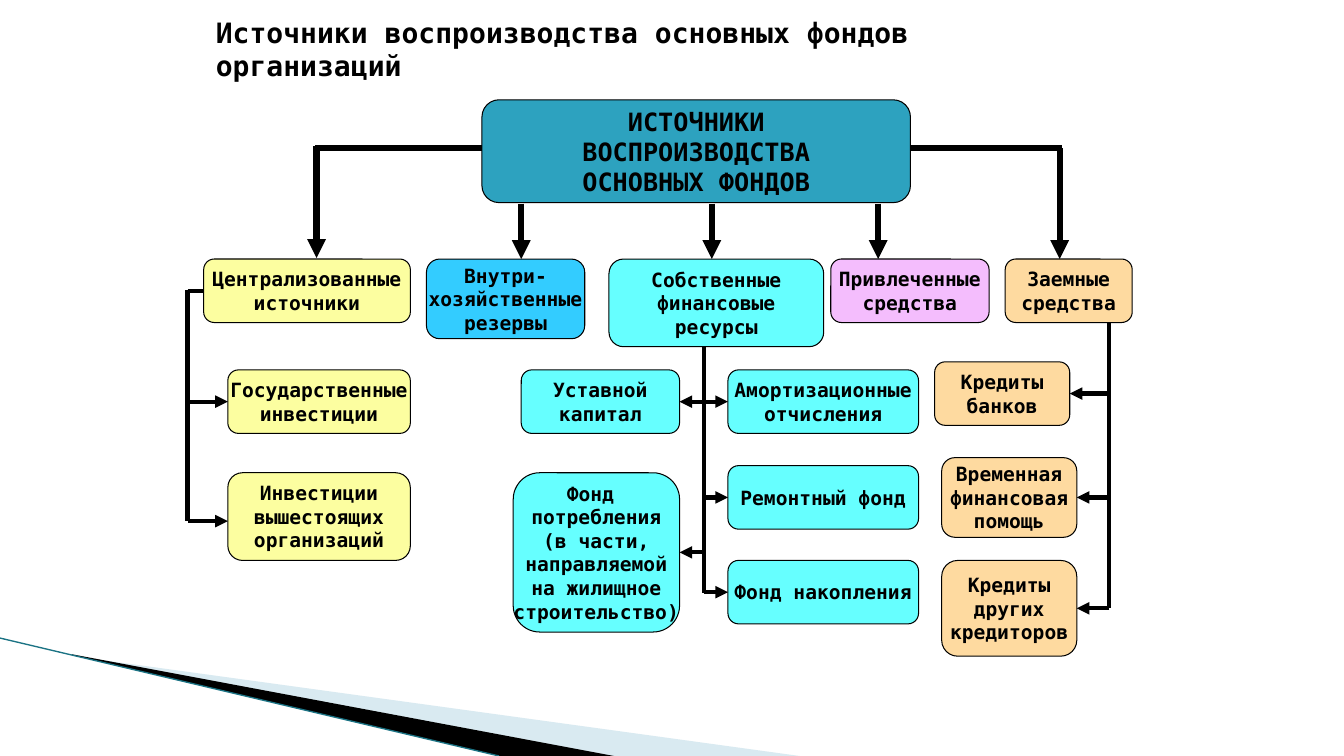
from typing import NamedTuple, Optional

from lxml.etree import SubElement
from pptx import Presentation
from pptx.dml.color import RGBColor
from pptx.enum.shapes import MSO_CONNECTOR as CONN, MSO_SHAPE as SHAPE
from pptx.enum.text import MSO_ANCHOR as ANCHOR, MSO_AUTO_SIZE as AUTOSIZE, PP_ALIGN as ALIGN
from pptx.oxml.ns import qn
from pptx.util import Emu, Pt

PX = 9144  # 100 px to the inch
FONT = "DejaVu Sans Mono"
BLACK = "000000"
YELLOW, CYAN, ORANGE = "FCFEA0", "66FFFF", "FEDAA0"
LEFT, RIGHT = 1, 3


class Box(NamedTuple):
    text: str
    x: int
    y: int
    w: int
    h: int
    fill: str
    size: int = 14


class Line(NamedTuple):
    x1: int
    y1: int
    x2: int
    y2: int
    width: float
    arrow: bool = False


class Branch(NamedTuple):
    """A line from a vertical trunk to the middle of a box side."""
    trunk: int
    box: str
    side: int
    arrow: bool = True


BOXES = {
    "root": Box("ИСТОЧНИКИ\nВОСПРОИЗВОДСТВА\nОСНОВНЫХ ФОНДОВ", 478, 99, 425, 102, "2DA2BF", 18),
    "central": Box("Централизованные\nисточники", 202, 257, 205, 63, YELLOW),
    "state": Box("Государственные\nинвестиции", 226, 367, 181, 63, YELLOW),
    "parent": Box("Инвестиции\nвышестоящих\nорганизаций", 226, 469, 181, 87, YELLOW),
    "internal": Box("Внутри-\nхозяйственные\nрезервы", 423, 257, 157, 79, "33CCFF"),
    "own": Box("Собственные\nфинансовые\nресурсы", 604, 257, 213, 87, CYAN),
    "charter": Box("Уставной\nкапитал", 517, 367, 157, 63, CYAN),
    "consumption": Box("Фонд \nпотребления\n(в части,\nнаправляемой\nна жилищное\nстроительство)",
                       509, 469, 165, 158, CYAN),
    "depreciation": Box("Амортизационные\nотчисления", 722, 367, 189, 63, CYAN),
    "repair": Box("Ремонтный фонд", 722, 462, 189, 63, CYAN),
    "savings": Box("Фонд накопления", 722, 556, 189, 63, CYAN),
    "attracted": Box("Привлеченные\nсредства", 824, 257, 157, 63, "F4BDFD"),
    "loans": Box("Заемные\nсредства", 997, 257, 126, 63, ORANGE),
    "banks": Box("Кредиты\nбанков", 927, 359, 134, 63, ORANGE),
    "aid": Box("Временная\nфинансовая\nпомощь", 934, 454, 134, 79, ORANGE),
    "creditors": Box("Кредиты\nдругих\nкредиторов", 934, 556, 134, 95, ORANGE),
}

LINES = [
    Line(478, 147, 312, 147, 4.5),
    Line(314, 145, 314, 256, 4.5, True),
    Line(903, 147, 1053, 147, 4.5),
    Line(1051, 147, 1051, 257, 4.5, True),
    *(Line(x, 202, x, 257, 4.5, True) for x in (517, 706, 871)),
    Line(186, 288, 186, 517, 3),
    Line(186, 517, 226, 517, 3, True),
    Line(698, 344, 698, 588, 3),
    Line(1100, 320, 1100, 603, 3),
]

BRANCHES = [
    Branch(186, "central", LEFT, False),
    Branch(186, "state", LEFT),
    *(Branch(698, name, RIGHT) for name in ("charter", "consumption")),
    *(Branch(698, name, LEFT) for name in ("depreciation", "repair", "savings")),
    *(Branch(1100, name, RIGHT) for name in ("banks", "aid", "creditors")),
]


def rgb(color: str) -> RGBColor:
    return RGBColor.from_string(color)


def px(n: int) -> Emu:
    return Emu(n * PX)


def write(tf, text: str, *, size: int, align=ALIGN.CENTER, wrap: bool = False) -> None:
    tf.auto_size = AUTOSIZE.NONE
    tf.word_wrap = wrap
    tf.vertical_anchor = ANCHOR.MIDDLE
    for i, line in enumerate(text.split("\n")):
        p = tf.paragraphs[0] if i == 0 else tf.add_paragraph()
        p.alignment = align
        r = p.add_run()
        r.text = line
        r.font.name, r.font.size, r.font.bold = FONT, Pt(size), True
        r.font.color.rgb = rgb(color=BLACK)


def add_box(s, box: Box):
    sp = s.shapes.add_shape(SHAPE.ROUNDED_RECTANGLE, *map(px, box[1:5]))
    sp.shadow.inherit = False
    sp.fill.solid()
    sp.fill.fore_color.rgb = rgb(box.fill)
    sp.line.color.rgb = rgb(BLACK)
    sp.line.width = Pt(0.75)
    write(sp.text_frame, box.text, size=box.size)
    return sp


def add_line(s, x1: int, y1: int, x2: int, y2: int, width: float,
             arrow: bool = False, color: str = BLACK):
    """Draw a straight connector between two points in EMU."""
    c = s.shapes.add_connector(CONN.STRAIGHT, x1, y1, x2, y2)
    c.line.color.rgb = rgb(color)
    c.line.width = Pt(width)
    sp_pr = c.element.spPr
    if arrow:
        SubElement(sp_pr.find(qn("a:ln")), qn("a:tailEnd"), type="triangle")
    SubElement(sp_pr, qn("a:effectLst"))
    return c


def add_branch(s, branch: Branch, sp) -> None:
    y = sp.top + sp.height // 2
    x = sp.left if branch.side == LEFT else sp.left + sp.width
    c = add_line(s, px(branch.trunk), y, x, y, 3, branch.arrow)
    c.end_connect(sp, branch.side)


def add_wedge(s, points: list[tuple[int, int]], color: str, alpha: Optional[int] = None) -> None:
    fb = s.shapes.build_freeform(*points[0], scale=PX)
    fb.add_line_segments(points[1:], close=True)
    sp = fb.convert_to_shape()
    sp.shadow.inherit = False
    sp.fill.solid()
    sp.fill.fore_color.rgb = rgb(color)
    sp.line.fill.background()
    if alpha is not None:
        clr = sp.element.spPr.find(qn("a:solidFill")).find(qn("a:srgbClr"))
        SubElement(clr, qn("a:alpha"), val=str(alpha * 1000))


def main() -> None:
    prs = Presentation()
    prs.slide_width, prs.slide_height = px(1333), px(750)
    s = prs.slides.add_slide(prs.slide_layouts[5])

    add_wedge(s, [(73, 651), (793, 750), (608, 750), (73, 650)], "A0CBDC", 40)
    add_wedge(s, [(71, 649), (609, 750), (496, 750), (72, 650)], BLACK)
    add_line(s, *map(px, (0, 633, 495, 750)), 0.95, color="1B7384")

    title = s.shapes.title
    title.left, title.top, title.width, title.height = map(px, (204, 29, 900, 39))
    write(title.text_frame, "Источники воспроизводства основных фондов организаций",
          size=20, align=ALIGN.LEFT, wrap=True)

    shapes = {name: add_box(s, box) for name, box in BOXES.items()}
    for line in LINES:
        add_line(s, *map(px, line[:4]), line.width, line.arrow)
    for branch in BRANCHES:
        add_branch(s, branch, shapes[branch.box])

    prs.save("out.pptx")


if __name__ == "__main__":
    main()
